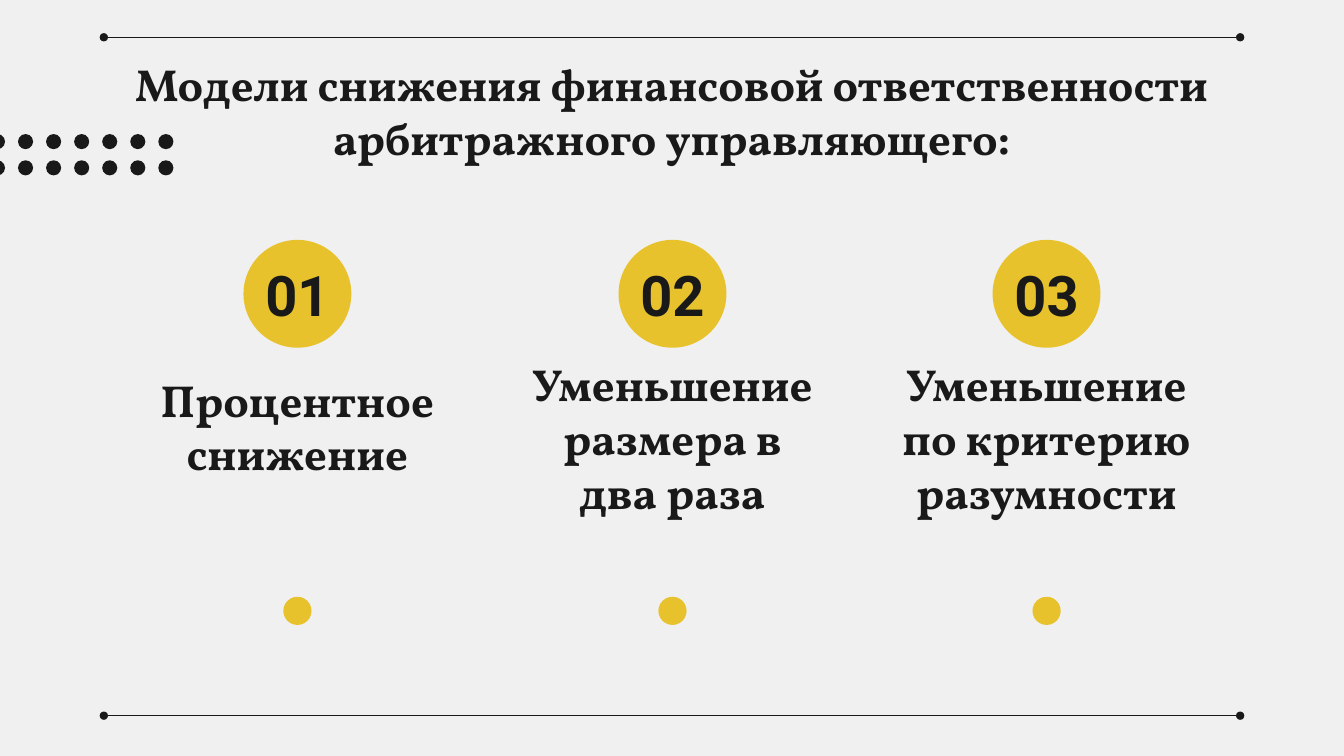
from dataclasses import dataclass

import pptx
import pptx.dml.color
import pptx.enum.shapes
import pptx.enum.text
import pptx.oxml
import pptx.oxml.ns
import pptx.util
from pptx.util import Inches

RGBColor = pptx.dml.color.RGBColor
Anchor = pptx.enum.text.MSO_ANCHOR

PAPER = RGBColor(0xF0, 0xF0, 0xF0)
YELLOW = RGBColor(0xE7, 0xC2, 0x2C)
INK = RGBColor(0x19, 0x19, 0x19)

BADGE, MARKER, DOT = 1.07, 0.28, 0.15
DOT_COLUMNS, DOT_SPAN = 7, 1.67


@dataclass
class Model:
    number: str
    caption: str
    center: float
    top: float
    width: float


MODELS = [
    Model("01", "Процентное снижение", 2.95, 4.12, 3.17),
    Model("02", "Уменьшение размера в два раза", 6.67, 4.5, 3.17),
    Model("03", "Уменьшение по критерию\vразумности", 10.38, 4.5, 3.46),
]


def add_circle(shapes, left: float, top: float, size: float, color: RGBColor) -> None:
    sp = shapes.add_shape(pptx.enum.shapes.MSO_SHAPE.OVAL,
                          Inches(left), Inches(top), Inches(size), Inches(size))
    sp.shadow.inherit = False
    sp.fill.solid()
    sp.fill.fore_color.rgb = color
    sp.line.fill.background()


def set_text(sp, text: str, size: int, font: str, anchor) -> None:
    tf = sp.text_frame
    tf.text = text
    tf.word_wrap = True
    tf.auto_size = pptx.enum.text.MSO_AUTO_SIZE.NONE
    tf.vertical_anchor = anchor
    tf.margin_left = tf.margin_right = tf.margin_top = tf.margin_bottom = Inches(0.13)
    p = tf.paragraphs[0]
    p.alignment = pptx.enum.text.PP_ALIGN.CENTER
    for r in p.runs:
        r.font.size = pptx.util.Pt(size)
        r.font.name = font
        r.font.bold = True
        r.font.color.rgb = INK


def add_rule(s, y: float) -> None:
    line = s.shapes.add_connector(pptx.enum.shapes.MSO_CONNECTOR.STRAIGHT,
                                  Inches(1.03), Inches(y), Inches(12.3), Inches(y))
    line.line.color.rgb = INK
    line.line.width = pptx.util.Pt(0.75)
    ln = line.line._get_or_add_ln()
    for end in ("headEnd", "tailEnd"):
        ln.append(pptx.oxml.parse_xml(
            f'<a:{end} {pptx.oxml.ns.nsdecls("a")} type="oval"/>'))
    line._element.spPr.append(pptx.oxml.parse_xml(
        f'<a:effectLst {pptx.oxml.ns.nsdecls("a")}/>'))


def add_model(s, model: Model) -> None:
    left = model.center - BADGE / 2
    add_circle(s.shapes, left, 2.38, BADGE, YELLOW)
    number = s.shapes.add_textbox(Inches(left), Inches(2.59), Inches(BADGE), Inches(0.65))
    set_text(number, model.number, 40, "Roboto", Anchor.MIDDLE)
    caption = s.shapes.add_textbox(Inches(model.center - model.width / 2), Inches(model.top),
                                   Inches(model.width), Inches(0.77))
    set_text(caption, model.caption, 32, "Vollkorn", Anchor.BOTTOM)
    add_circle(s.shapes, model.center - MARKER / 2, 5.92, MARKER, YELLOW)


def main() -> None:
    prs = pptx.Presentation()
    prs.slide_width, prs.slide_height = Inches(13.33), Inches(7.5)
    s = prs.slides.add_slide(prs.slide_layouts[5])
    s.background.fill.solid()
    s.background.fill.fore_color.rgb = PAPER

    # Title
    title = s.shapes.title
    title.left, title.top = Inches(1.05), Inches(0.43)
    title.width, title.height = Inches(11.23), Inches(0.84)
    set_text(title, "Модели снижения финансовой ответственности арбитражного управляющего:",
             32, "Vollkorn", Anchor.TOP)

    # Three models
    for model in MODELS:
        add_model(s, model)

    # Rules at top and bottom
    for y in (0.37, 7.1):
        add_rule(s, y)

    # Dot grid at the left edge
    dots = s.shapes.add_group_shape()
    for column in range(DOT_COLUMNS):
        for top in (1.59, 1.33):
            left = -0.1 + column * DOT_SPAN / (DOT_COLUMNS - 1)
            add_circle(dots.shapes, left, top, DOT, INK)

    prs.save("out.pptx")


if __name__ == "__main__":
    main()
